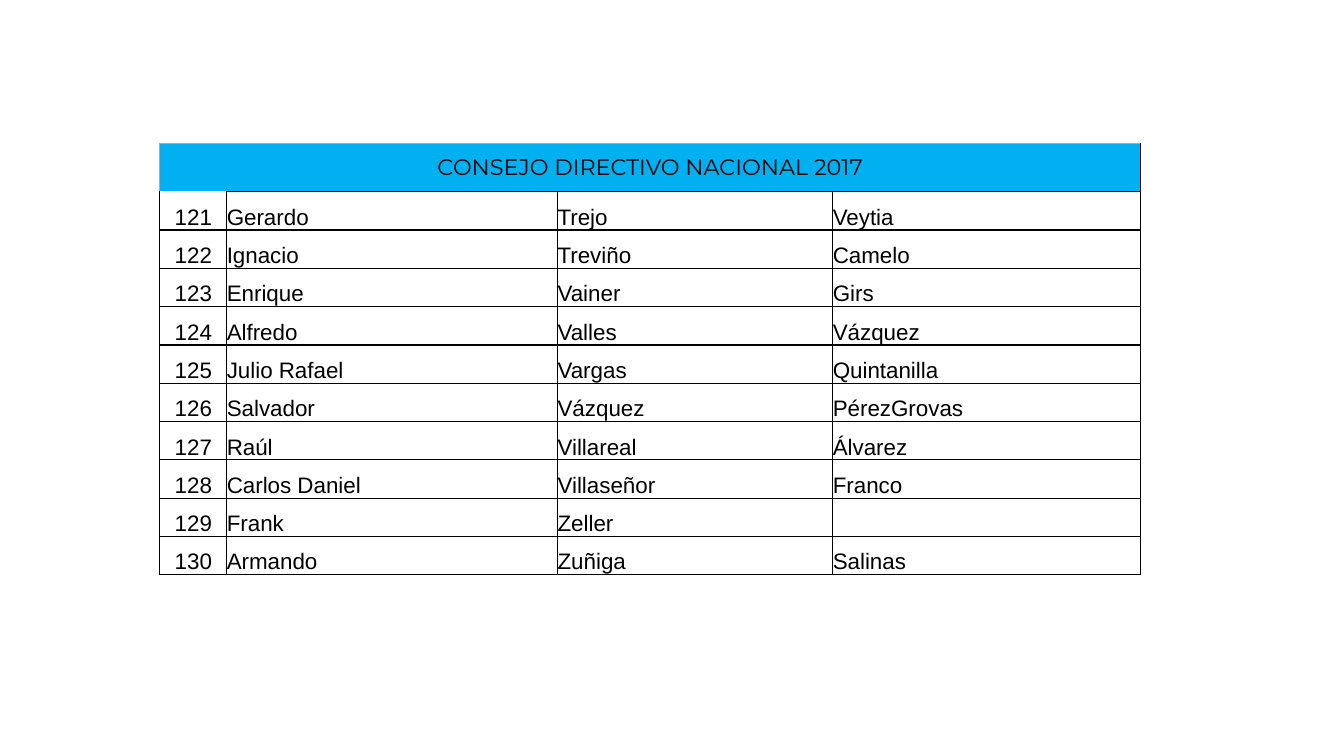
import pptx
import pptx.util
import pptx.dml.color
import pptx.enum.text
import pptx.oxml
import pptx.oxml.ns

Pt = pptx.util.Pt
ALIGN = pptx.enum.text.PP_ALIGN
ANCHOR = pptx.enum.text.MSO_ANCHOR

HUES = {"head": "00B0F0", "body": "FFFFFF", "ink": "000000", "edge": "AAAAAA"}
TITLE = "CONSEJO DIRECTIVO NACIONAL 2017"
FIRST = 121
NAMES = [
    ("Gerardo", "Trejo", "Veytia"),
    ("Ignacio", "Treviño", "Camelo"),
    ("Enrique", "Vainer", "Girs"),
    ("Alfredo", "Valles", "Vázquez"),
    ("Julio Rafael", "Vargas", "Quintanilla"),
    ("Salvador", "Vázquez", "PérezGrovas"),
    ("Raúl", "Villareal", "Álvarez"),
    ("Carlos Daniel", "Villaseñor", "Franco"),
    ("Frank", "Zeller", ""),
    ("Armando", "Zuñiga", "Salinas"),
]
SHARES = (47.8, 236.3, 196.6, 219.8)
HEAD = 34.6


def color(key):
    return pptx.dml.color.RGBColor.from_string(HUES[key])


def border(cell, sides):
    """Draw 1 pt lines; sides maps L, R, T, B, in that order, to a colour key."""
    props = cell._tc.get_or_add_tcPr()
    for spot, (side, key) in enumerate(sides.items()):
        line = pptx.oxml.parse_xml(
            f'<a:ln{side} {pptx.oxml.ns.nsdecls("a")} w="{Pt(1)}"><a:solidFill>'
            f'<a:srgbClr val="{HUES[key]}"/></a:solidFill></a:ln{side}>')
        props.insert(spot, line)


def style(cell, text, fill, font, align, anchor):
    cell.fill.solid()
    cell.fill.fore_color.rgb = color(fill)
    cell.margin_left = cell.margin_right = cell.margin_top = cell.margin_bottom = 0
    cell.vertical_anchor = anchor
    cell.text_frame.text = text
    para = cell.text_frame.paragraphs[0]
    para.alignment = align
    for run in para.runs:
        run.font.name = font
        run.font.size = Pt(16)
        run.font.bold = False
        run.font.color.rgb = color("ink")


def roster(slide, left, top, width, height):
    """Place the numbered list of members under its title row."""
    count = len(NAMES) + 1
    table = slide.shapes.add_table(
        count, len(SHARES), Pt(left), Pt(top), Pt(width), Pt(height)).table
    table.first_row = table.horz_banding = False
    for col, share in zip(table.columns, SHARES):
        col.width = Pt(width * share / sum(SHARES))
    for row in table.rows:
        row.height = Pt((height - HEAD) / len(NAMES))
    table.rows[0].height = Pt(HEAD)

    title = table.cell(0, 0)
    title.merge(table.cell(0, len(SHARES) - 1))
    style(title, TITLE, "head", "Montserrat", ALIGN.CENTER, ANCHOR.MIDDLE)
    for col in range(len(SHARES)):
        border(table.cell(0, col), {"L": "edge", "R": "ink", "T": "edge"})

    for r, names in enumerate(NAMES, 1):
        for c, text in enumerate((str(FIRST + r - 1), *names)):
            cell = table.cell(r, c)
            align = ALIGN.LEFT if c else ALIGN.CENTER
            style(cell, text, "body", "Arial", align, ANCHOR.BOTTOM)
            sides = "LRB" if (r, c) == (1, 0) else "LRTB"
            border(cell, dict.fromkeys(sides, "ink"))


def main():
    deck = pptx.Presentation()
    deck.slide_width, deck.slide_height = Pt(960), Pt(540)
    slide = deck.slides.add_slide(deck.slide_layouts[6])
    roster(slide, 114.2, 102.4, 700.5, 308.3)
    deck.save("out.pptx")


if __name__ == "__main__":
    main()
